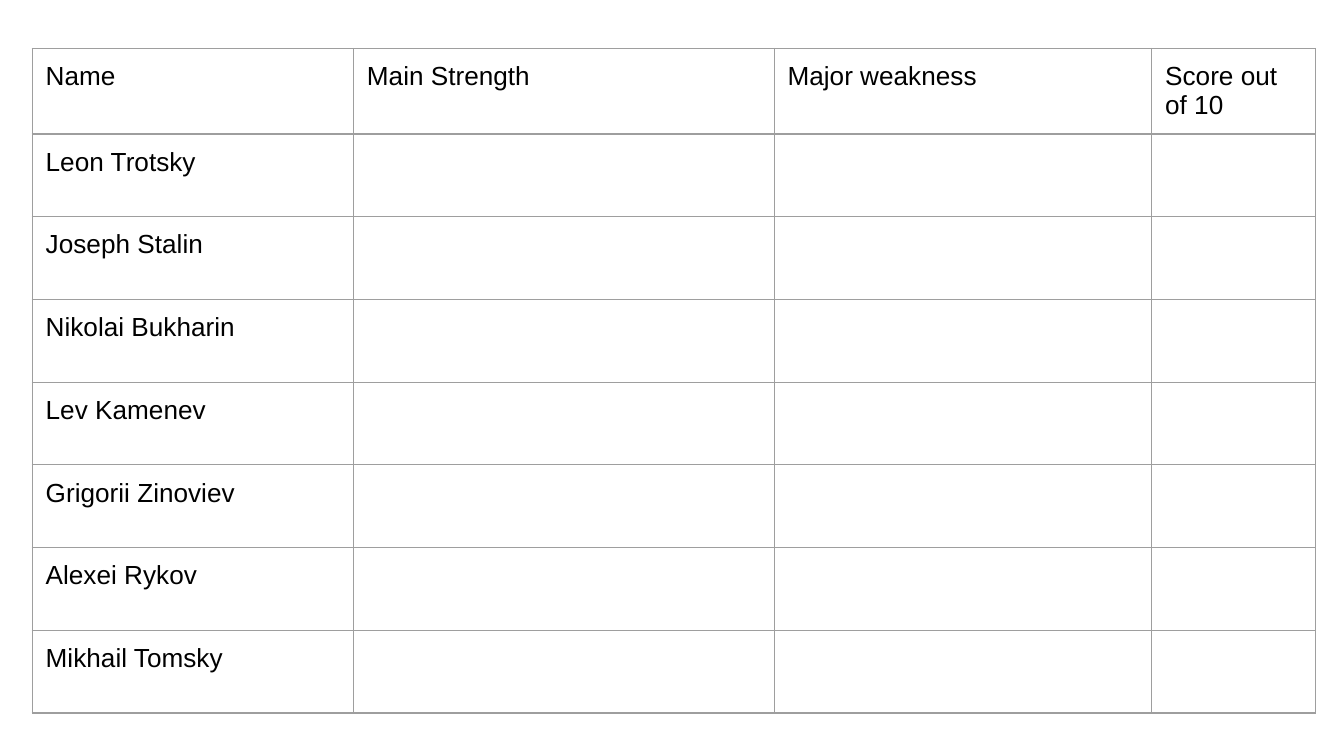
from lxml import etree
from pptx import Presentation, util as u
from pptx.dml.color import RGBColor
from pptx.oxml import ns

COLORS = {"background": "FFFFFF", "text": "000000", "border": "9E9E9E"}
HEADERS = ["Name", "Main Strength", "Major weakness", "Score out of 10"]
LEADERS = ["Leon Trotsky", "Joseph Stalin", "Nikolai Bukharin", "Lev Kamenev",
           "Grigorii Zinoviev", "Alexei Rykov", "Mikhail Tomsky"]
COLUMN_WIDTHS = [2.39, 3.13, 2.81, 1.22]
ROW_HEIGHT = 4.31 / len(LEADERS)


def add_borders(cell):
    properties = cell._tc.get_or_add_tcPr()
    for side in ("lnL", "lnR", "lnT", "lnB"):
        line = etree.SubElement(properties, ns.qn(f"a:{side}"), w=str(u.Pt(0.75)))
        fill = etree.SubElement(line, ns.qn("a:solidFill"))
        etree.SubElement(fill, ns.qn("a:srgbClr"), val=COLORS["border"])


# Widescreen slide, 16:9
presentation = Presentation()
presentation.slide_width = u.Inches(10)
presentation.slide_height = u.Inches(10 * 9 / 16)
slide = presentation.slides.add_slide(presentation.slide_layouts[6])
slide.background.fill.solid()
slide.background.fill.fore_color.rgb = RGBColor.from_string(COLORS["background"])

# Table grid
rows = [HEADERS] + [[leader, "", "", ""] for leader in LEADERS]
table = slide.shapes.add_table(
    len(rows), len(HEADERS), u.Inches(0.24), u.Inches(0.36),
    u.Inches(sum(COLUMN_WIDTHS)), u.Inches(ROW_HEIGHT * len(rows))).table
table.first_row = False
table.horz_banding = False
for column, width in zip(table.columns, COLUMN_WIDTHS):
    column.width = u.Inches(width)
for row in table.rows:
    row.height = u.Inches(ROW_HEIGHT)

# Cells
for row, texts in zip(table.rows, rows):
    for cell, words in zip(row.cells, texts):
        add_borders(cell)
        cell.fill.background()
        cell.margin_left = cell.margin_right = u.Inches(0.1)
        cell.margin_top = cell.margin_bottom = u.Inches(0.1)
        if words:
            run = cell.text_frame.paragraphs[0].add_run()
            run.text = words
            run.font.name = "Arial"
            run.font.size = u.Pt(14)
            run.font.color.rgb = RGBColor.from_string(COLORS["text"])

presentation.save("out.pptx")
